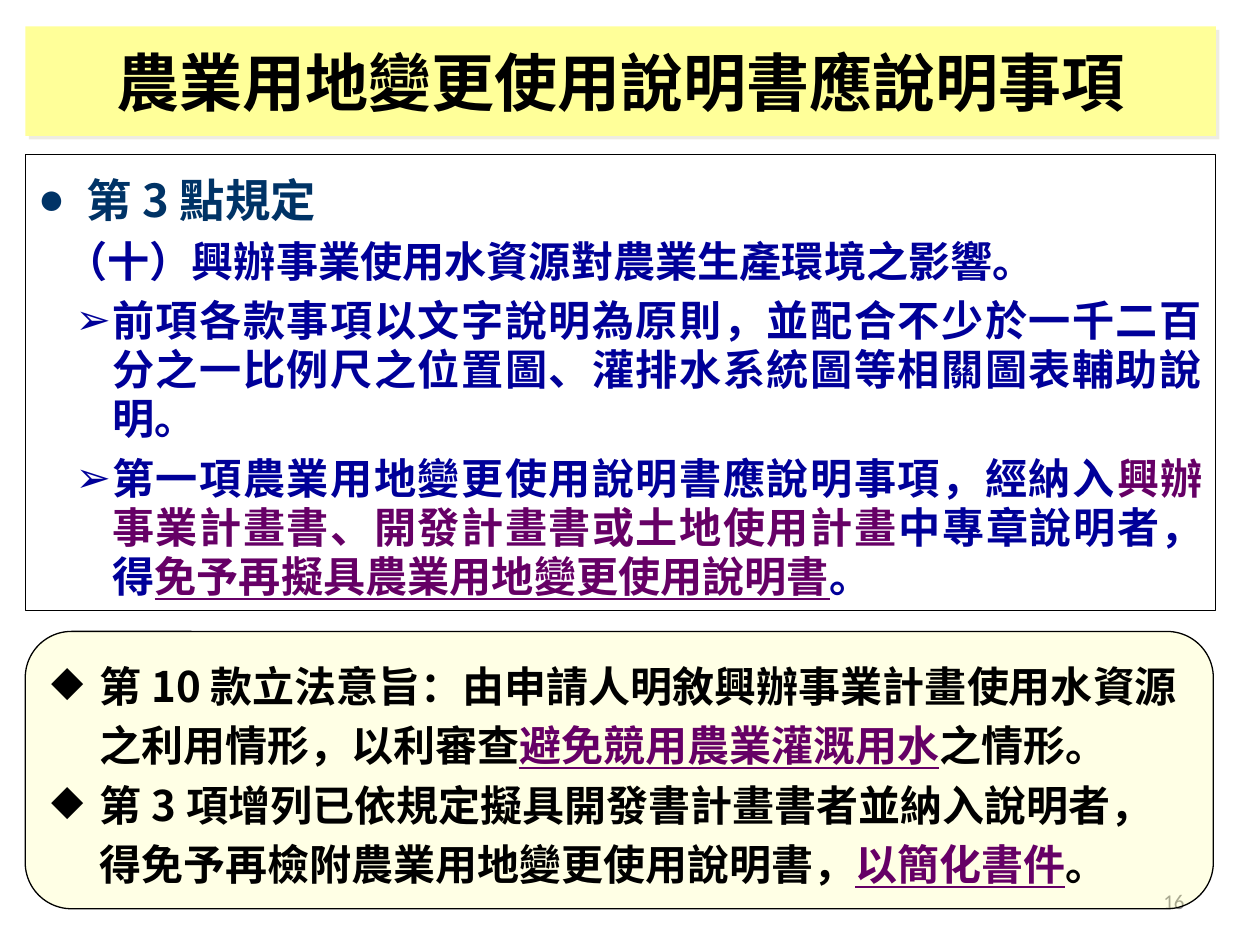
import pptx
import pptx.util
import pptx.dml.color
import pptx.enum.shapes
import pptx.enum.text
import pptx.oxml.ns
from lxml import etree

Cm = pptx.util.Cm
Pt = pptx.util.Pt
ALIGN = pptx.enum.text.PP_ALIGN
ANCHOR = pptx.enum.text.MSO_ANCHOR
SANS = "Noto Sans CJK SC"
SERIF = "Times New Roman"
BLACK, BLUE, PLUM = "000000", "000099", "660066"


def tint(code):
    return pptx.dml.color.RGBColor.from_string(code)


def node(base, tag, **attrs):
    return etree.SubElement(base, pptx.oxml.ns.qn(tag), attrs)


def write(para, text, size=24, font=SANS, color=BLACK, bold=True, line=False):
    run = para.add_run()
    run.text = text
    face = run.font
    face.size = Pt(size)
    face.bold = bold
    face.underline = line
    face.color.rgb = tint(color)
    face.name = font
    node(run._r.get_or_add_rPr(), "a:ea", typeface=SANS)


class Deck:
    edge = BLACK
    width = 0.75

    def __init__(self):
        self.file = pptx.Presentation()
        self.file.slide_width = Cm(25.4)
        self.file.slide_height = Cm(19.05)
        self.slide = self.file.slides.add_slide(self.file.slide_layouts[1])

    def place(self, shape, box):
        shape.left, shape.top, shape.width, shape.height = map(Cm, box)

    def border(self, shape):
        shape.line.color.rgb = tint(self.edge)
        shape.line.width = Pt(self.width)

    def frame(self, shape, anchor=ANCHOR.TOP):
        frame = shape.text_frame
        frame.word_wrap = True
        frame.auto_size = pptx.enum.text.MSO_AUTO_SIZE.NONE
        frame.vertical_anchor = anchor
        return frame

    def fill(self, frame, items):
        for i, (runs, form) in enumerate(items):
            para = frame.add_paragraph() if i else frame.paragraphs[0]
            self.layout(para, **form)
            for text, style in runs:
                write(para, text, **style)

    def layout(self, para, space, left=0, hang=0, mark=None,
               before=0, align=ALIGN.LEFT):
        para.alignment = align
        para.line_spacing = space
        para.space_before = Pt(before)
        props = para._p.get_or_add_pPr()
        props.set("marL", str(Cm(left)))
        props.set("indent", str(-Cm(hang)))
        if mark:
            node(props, "a:buChar", char=mark)
        else:
            node(props, "a:buNone")

    def title(self, text, box):
        shape = self.slide.shapes.title
        self.place(shape, box)
        shape.fill.solid()
        shape.fill.fore_color.rgb = tint("FFFF99")
        shape.shadow.inherit = False
        glow = node(shape._element.spPr.find(pptx.oxml.ns.qn("a:effectLst")),
                    "a:outerShdw", dist=str(Pt(2.8)), dir="2700000")
        node(glow, "a:srgbClr", val="EEECE1")
        para = self.frame(shape, ANCHOR.MIDDLE).paragraphs[0]
        para.alignment = ALIGN.CENTER
        write(para, text, size=36, font=SERIF)

    def body(self, items, box):
        shape = self.slide.placeholders[1]
        self.place(shape, box)
        self.border(shape)
        self.fill(self.frame(shape), items)

    def number(self, text, box):
        shape = self.slide.shapes.add_textbox(*map(Cm, box))
        para = self.frame(shape, ANCHOR.MIDDLE).paragraphs[0]
        para.alignment = ALIGN.RIGHT
        write(para, text, size=12, font="Calibri", color="8C8C8C", bold=False)

    def panel(self, items, box):
        kind = pptx.enum.shapes.MSO_SHAPE.ROUNDED_RECTANGLE
        shape = self.slide.shapes.add_shape(kind, *map(Cm, box))
        shape.shadow.inherit = False
        shape.fill.solid()
        shape.fill.fore_color.rgb = tint("FFFF99")
        color = shape._element.spPr.find(".//" + pptx.oxml.ns.qn("a:srgbClr"))
        node(color, "a:alpha", val="25000")
        self.border(shape)
        self.fill(self.frame(shape), items)


def main():
    deck = Deck()
    deck.title("農業用地變更使用說明書應說明事項", (0.51, 0.53, 24, 2.21))

    head = dict(size=25.9, color="003366")
    blue = dict(size=24.1, color=BLUE)
    plum = dict(size=24.1, color=PLUM)
    under = dict(plum, line=True)
    plain = dict(space=Pt(28), before=6, align=ALIGN.JUSTIFY)
    arrow = dict(plain, left=1.5, hang=0.74, mark="➢")
    deck.body([
        ([("第3點規定", head)],
         dict(space=1.2, before=6, left=0.97, hang=0.97, mark="●")),
        ([("（十）興辦事業使用水資源對農業生產環境之影響。", blue)],
         dict(plain, left=0.55)),
        ([("前項各款事項以文字說明為原則，並配合不少於一千二百分之一比例尺之"
           "位置圖、灌排水系統圖等相關圖表輔助說明。", blue)], arrow),
        ([("第一項農業用地變更使用說明書應說明事項，經納入", blue),
          ("興辦事業計畫書、開發計畫書或土地使用計畫", plum),
          ("中專章說明者，得", blue),
          ("免予再擬具農業用地變更使用說明書", under),
          ("。", blue)], arrow),
    ], (0.51, 3.12, 24, 9.19))

    deck.number("16", (18.21, 17.65, 5.92, 1.02))

    serif = dict(font=SERIF)
    point = dict(space=Pt(34), left=0.97, hang=0.97, mark="◆")
    deck.panel([
        ([("第", serif),
          ("10款立法", {}),
          ("意旨：由申請人明敘興辦事業計畫使用水資源之利用情形，以利審查", serif),
          ("避免競用農業灌溉用水", dict(serif, color=PLUM, line=True)),
          ("之情形。", serif)], point),
        ([("第3項增列已依規定擬具開發書計畫書者並納入說明者，"
           "得免予再檢附農業用地變更使用說明書，", {}),
          ("以簡化書件", dict(color=PLUM, line=True)),
          ("。", {})], point),
    ], (0.51, 12.73, 23.95, 5.59))

    deck.file.save("out.pptx")


if __name__ == "__main__":
    main()
